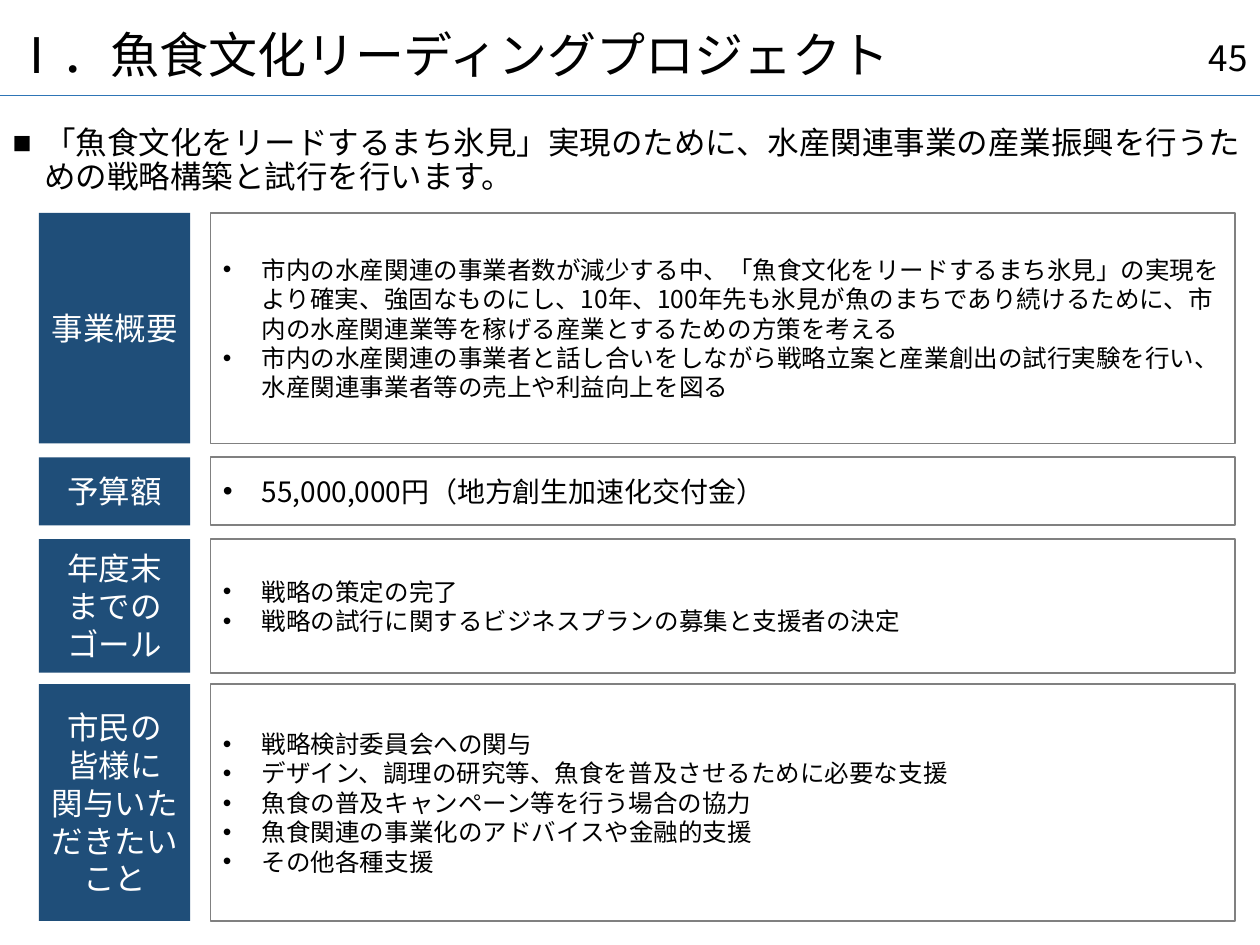
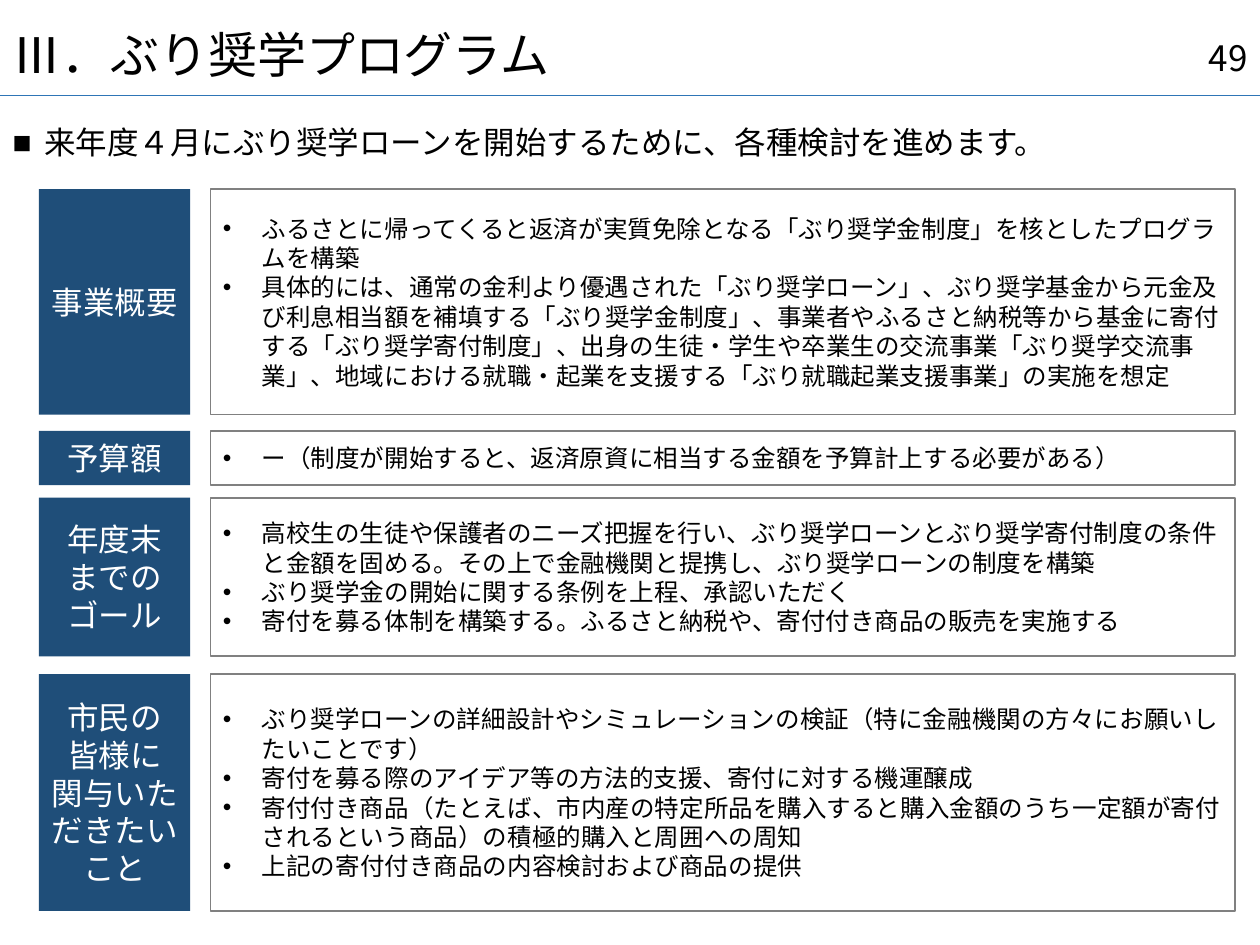
"""Build two project overview slides with labelled rows."""
from dataclasses import dataclass

import pptx
import pptx.dml.color
import pptx.enum.shapes
import pptx.enum.text
import pptx.oxml
import pptx.oxml.ns
import pptx.util
from pptx.util import Inches

FONT = "Noto Sans CJK JP"
COLORS = {
    "text": "000000",
    "white": "FFFFFF",
    "label": "1F4E79",
    "border": "808080",
    "rule": "2E75B6",
}
LABELS = [
    ["事業概要"],
    ["予算額"],
    ["年度末", "までの", "ゴール"],
    ["市民の", "皆様に", "関与いただきたいこと"],
]
LABEL_LEFT, LABEL_WIDTH = Inches(0.31), Inches(1.2)
DETAIL_LEFT, DETAIL_WIDTH = Inches(1.67), Inches(8.13)
RULE_TOP = Inches(0.76)
ALIGN = pptx.enum.text.PP_ALIGN
ANCHOR = pptx.enum.text.MSO_ANCHOR


@dataclass
class Row:
    top: float
    height: float
    items: list[str]
    size: int = 14


@dataclass
class Project:
    title: str
    number: str
    summary: str
    summary_height: float
    rows: list[Row]


@dataclass
class Style:
    size: int
    color: str = "text"
    align: ALIGN = ALIGN.LEFT
    bullet: str = ""
    indent: float = 0
    line_spacing: float = 1.0
    space_before: int = 0


TITLE = Style(28, line_spacing=0.9)
SUMMARY = Style(18, bullet="■", indent=0.25, line_spacing=0.9, space_before=10)
NUMBER = Style(20, align=ALIGN.RIGHT)
LABEL = Style(18, color="white", align=ALIGN.CENTER)

PROJECTS = [
    Project(
        "Ⅰ．魚食文化リーディングプロジェクト",
        "45",
        "「魚食文化をリードするまち氷見」実現のために、水産関連事業の産業振興を行うための戦略構築と試行を行います。",
        1.12,
        [
            Row(1.69, 1.83, [
                "市内の水産関連の事業者数が減少する中、「魚食文化をリードするまち氷見」の実現をより確実、強固なものにし、"
                "10年、100年先も氷見が魚のまちであり続けるために、市内の水産関連業等を稼げる産業とするための方策を考える",
                "市内の水産関連の事業者と話し合いをしながら戦略立案と産業創出の試行実験を行い、"
                "水産関連事業者等の売上や利益向上を図る",
            ]),
            Row(3.63, 0.54, ["55,000,000円（地方創生加速化交付金）"], 16),
            Row(4.28, 1.06, [
                "戦略の策定の完了",
                "戦略の試行に関するビジネスプランの募集と支援者の決定",
            ]),
            Row(5.43, 1.88, [
                "戦略検討委員会への関与",
                "デザイン、調理の研究等、魚食を普及させるために必要な支援",
                "魚食の普及キャンペーン等を行う場合の協力",
                "魚食関連の事業化のアドバイスや金融的支援",
                "その他各種支援",
            ]),
        ],
    ),
    Project(
        "Ⅲ．ぶり奨学プログラム",
        "49",
        "来年度４月にぶり奨学ローンを開始するために、各種検討を進めます。",
        0.76,
        [
            Row(1.5, 1.79, [
                "ふるさとに帰ってくると返済が実質免除となる「ぶり奨学金制度」を核としたプログラムを構築",
                "具体的には、通常の金利より優遇された「ぶり奨学ローン」、ぶり奨学基金から元金及び利息相当額を補填する"
                "「ぶり奨学金制度」、事業者やふるさと納税等から基金に寄付する「ぶり奨学寄付制度」、"
                "出身の生徒・学生や卒業生の交流事業「ぶり奨学交流事業」、"
                "地域における就職・起業を支援する「ぶり就職起業支援事業」の実施を想定",
            ]),
            Row(3.42, 0.43, ["ー（制度が開始すると、返済原資に相当する金額を予算計上する必要がある）"]),
            Row(3.95, 1.26, [
                "高校生の生徒や保護者のニーズ把握を行い、ぶり奨学ローンとぶり奨学寄付制度の条件と金額を固める。"
                "その上で金融機関と提携し、ぶり奨学ローンの制度を構築",
                "ぶり奨学金の開始に関する条例を上程、承認いただく",
                "寄付を募る体制を構築する。ふるさと納税や、寄付付き商品の販売を実施する",
            ]),
            Row(5.35, 1.88, [
                "ぶり奨学ローンの詳細設計やシミュレーションの検証（特に金融機関の方々にお願いしたいことです）",
                "寄付を募る際のアイデア等の方法的支援、寄付に対する機運醸成",
                "寄付付き商品（たとえば、市内産の特定所品を購入すると購入金額のうち一定額が寄付されるという商品）の"
                "積極的購入と周囲への周知",
                "上記の寄付付き商品の内容検討および商品の提供",
            ]),
        ],
    ),
]


def color(name: str) -> pptx.dml.color.RGBColor:
    return pptx.dml.color.RGBColor.from_string(COLORS[name])


def add_child(parent, tag: str, **attributes: str) -> None:
    child = pptx.oxml.parse_xml(f"<{tag} {pptx.oxml.ns.nsdecls('a')}/>")
    for name, value in attributes.items():
        child.set(name, value)
    parent.append(child)


def format_paragraph(para, style: Style) -> None:
    para.alignment = style.align
    para.line_spacing = style.line_spacing
    para.space_before = pptx.util.Pt(style.space_before)
    if style.bullet:
        properties = para._p.get_or_add_pPr()
        properties.set("marL", str(Inches(style.indent)))
        properties.set("indent", str(-Inches(style.indent)))
        add_child(properties, "a:buFont", typeface="Arial")
        add_child(properties, "a:buChar", char=style.bullet)
    font = para.font
    font.size = pptx.util.Pt(style.size)
    font.color.rgb = color(style.color)
    font.name = FONT
    add_child(font._element, "a:ea", typeface=FONT)


def write(box, lines: list[str], style: Style, anchor: ANCHOR = ANCHOR.MIDDLE) -> None:
    frame = box.text_frame
    frame.word_wrap = True
    frame.auto_size = pptx.enum.text.MSO_AUTO_SIZE.NONE
    frame.vertical_anchor = anchor
    frame.text = "\n".join(lines)
    for para in frame.paragraphs:
        format_paragraph(para, style)


def place(box, left: float, top: float, width: float, height: float) -> None:
    box.left, box.top = Inches(left), Inches(top)
    box.width, box.height = Inches(width), Inches(height)


def add_box(page, left: int, width: int, row: Row, fill: str):
    box = page.shapes.add_shape(
        pptx.enum.shapes.MSO_SHAPE.RECTANGLE, left, Inches(row.top), width, Inches(row.height)
    )
    box.shadow.inherit = False
    box.fill.solid()
    box.fill.fore_color.rgb = color(fill)
    box.line.fill.background()
    return box


def add_row(page, row: Row, label: list[str]) -> None:
    write(add_box(page, LABEL_LEFT, LABEL_WIDTH, row, "label"), label, LABEL)
    detail = add_box(page, DETAIL_LEFT, DETAIL_WIDTH, row, "white")
    detail.line.color.rgb = color("border")
    detail.line.width = pptx.util.Pt(1)
    write(detail, row.items, Style(row.size, bullet="•", indent=0.31))


def add_rule(page, width: int) -> None:
    rule = page.shapes.add_connector(
        pptx.enum.shapes.MSO_CONNECTOR.STRAIGHT, 0, RULE_TOP, width, RULE_TOP
    )
    rule.line.color.rgb = color("rule")
    rule.line.width = pptx.util.Pt(0.5)
    add_child(rule._element.spPr, "a:effectLst")


def add_project(deck, project: Project) -> None:
    page = deck.slides.add_slide(deck.slide_layouts[1])
    add_rule(page, deck.slide_width)
    title, summary = page.shapes.title, page.placeholders[1]
    place(title, 0, 0.31, 10, 0.29)
    write(title, [project.title], TITLE)
    place(summary, 0, 0.96, 10, project.summary_height)
    write(summary, [project.summary], SUMMARY, ANCHOR.TOP)
    number = page.shapes.add_textbox(Inches(7.75), Inches(0.26), Inches(2.25), Inches(0.4))
    write(number, [project.number], NUMBER)
    for row, label in zip(project.rows, LABELS):
        add_row(page, row, label)


def main() -> None:
    deck = pptx.Presentation()
    deck.slide_width, deck.slide_height = Inches(10), Inches(7.5)
    for project in PROJECTS:
        add_project(deck, project)
    deck.save("out.pptx")


if __name__ == "__main__":
    main()
